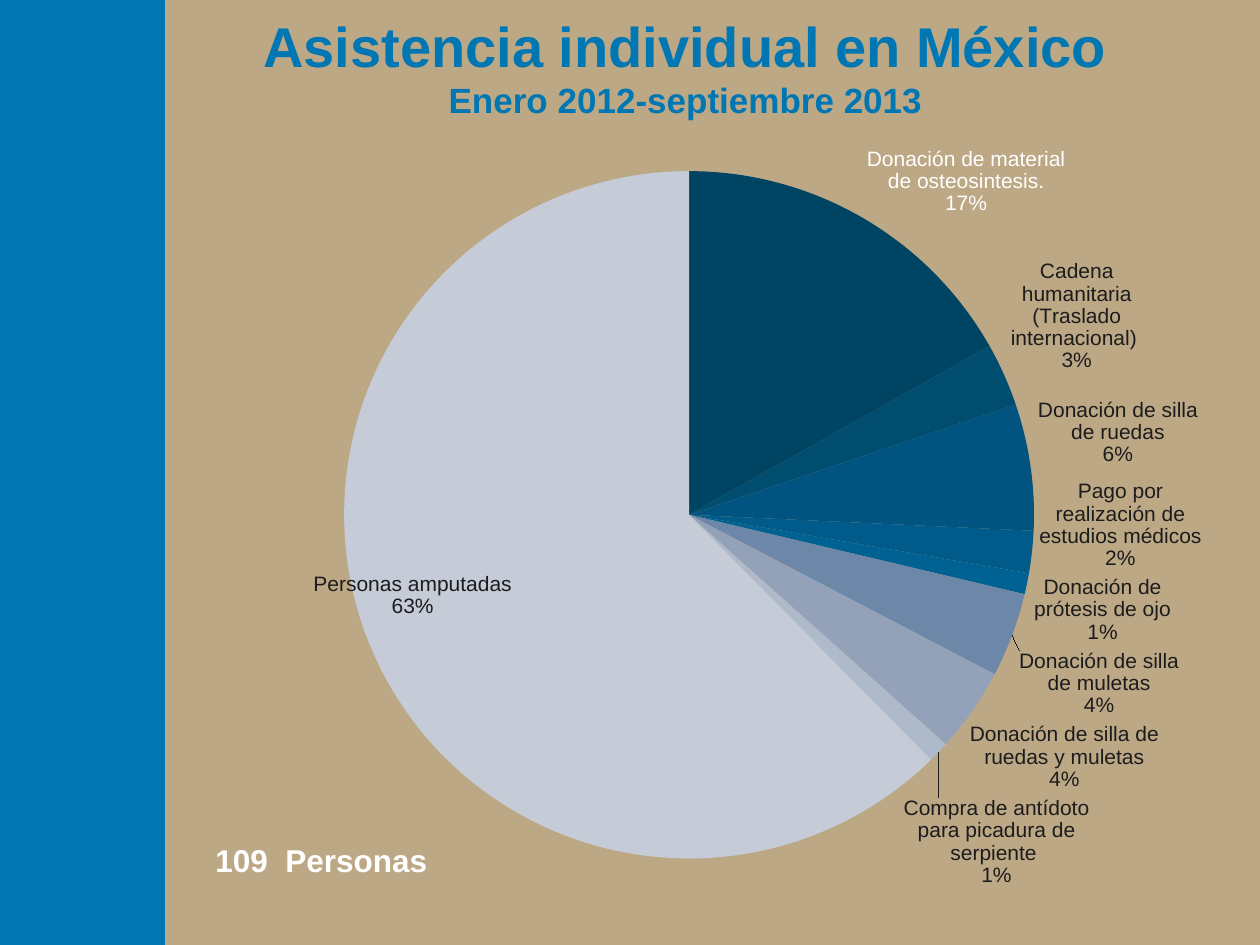
from lxml import etree
from pptx import Presentation
from pptx.chart.data import CategoryChartData
from pptx.dml.color import RGBColor
from pptx.enum.chart import XL_CHART_TYPE, XL_LABEL_POSITION
from pptx.enum.shapes import MSO_SHAPE
from pptx.enum.text import MSO_ANCHOR, MSO_AUTO_SIZE, PP_ALIGN
from pptx.oxml.ns import qn
from pptx.util import Pt

COLORS = {"sand": "BDA886", "blue": "0077B2", "white": "FFFFFF", "ink": "1C1C1C"}

ASSISTANCE = [
    ("Donación de material de osteosintesis.", 17, "004463"),
    ("Cadena humanitaria (Traslado internacional) ", 3, "004D70"),
    ("Donación de silla de ruedas", 6, "00547F"),
    ("Pago por realización de estudios médicos ", 2, "005B8A"),
    ("Donación de prótesis de ojo", 1, "006293"),
    ("Donación de silla de muletas", 4, "6D87A8"),
    ("Donación de silla de ruedas y muletas", 4, "93A2B8"),
    ("Compra de antídoto para picadura de serpiente ", 1, "AEB9CA"),
    ("Amputados", 63, "C6CBD8"),
]


def rgb(name):
    return RGBColor.from_string(COLORS.get(name, name))


def manual_layout(**settings):
    layout = etree.Element(qn("c:layout"))
    manual = etree.SubElement(layout, qn("c:manualLayout"))
    for tag, value in settings.items():
        etree.SubElement(manual, qn(f"c:{tag}")).set("val", str(value))
    return layout


class SlideBuilder:
    """Holds the style and the current slide and adds each kind of element."""

    font_name = "Arial"

    def __init__(self, slide):
        self.slide = slide

    def style(self, font, color, size=None, bold=None):
        font.name = self.font_name
        font.color.rgb = rgb(color)
        if size:
            font.size = Pt(size)
        if bold is not None:
            font.bold = bold

    def background(self, color):
        fill = self.slide.background.fill
        fill.solid()
        fill.fore_color.rgb = rgb(color)

    def band(self, left, top, width, height, color):
        band = self.slide.shapes.add_shape(
            MSO_SHAPE.RECTANGLE, Pt(left), Pt(top), Pt(width), Pt(height))
        band.shadow.inherit = False
        band.fill.solid()
        band.fill.fore_color.rgb = rgb(color)
        band.line.fill.background()

    def title(self, left, top, width, height, lines):
        title = self.slide.shapes.title
        title.left, title.top = Pt(left), Pt(top)
        title.width, title.height = Pt(width), Pt(height)
        frame = title.text_frame
        frame.auto_size = MSO_AUTO_SIZE.NONE
        frame.vertical_anchor = MSO_ANCHOR.MIDDLE
        heading = frame.paragraphs[0]
        heading.alignment = PP_ALIGN.CENTER
        for number, (text, size) in enumerate(lines):
            if number:
                heading.add_line_break()
            run = heading.add_run()
            run.text = text
            run.font.size = Pt(size)
        self.style(heading.font, "blue", bold=True)

    def note(self, left, top, width, height, text, size, color):
        note = self.slide.shapes.add_textbox(Pt(left), Pt(top), Pt(width), Pt(height))
        note.text_frame.word_wrap = True
        note.text_frame.text = text
        self.style(note.text_frame.paragraphs[0].font, color, size, True)

    def pie(self, left, top, width, height, rows, plot_box):
        data = CategoryChartData()
        data.categories = [name for name, _, _ in rows]
        data.add_series("Series 1", [value for _, value, _ in rows])
        chart = self.slide.shapes.add_chart(
            XL_CHART_TYPE.PIE, Pt(left), Pt(top), Pt(width), Pt(height), data).chart
        chart.has_title = False
        chart.has_legend = False
        self.style(chart.font, "white", 18)

        plot_area = chart.plots[0]._element.getparent()
        for old_layout in plot_area.findall(qn("c:layout")):
            plot_area.remove(old_layout)
        x, y, w, h = plot_box
        plot_area.insert(0, manual_layout(
            layoutTarget="inner", xMode="edge", yMode="edge", x=x, y=y, w=w, h=h))

        chart.plots[0].vary_by_categories = True
        series = chart.plots[0].series[0]
        for index, (_, _, color) in enumerate(rows):
            slice_format = series.points[index].format
            slice_format.fill.solid()
            slice_format.fill.fore_color.rgb = rgb(color)
            slice_format.line.fill.background()

        labels = series.data_labels
        labels.show_value = False
        labels.show_category_name = True
        labels.show_percentage = True
        labels.number_format = "0%"
        labels.number_format_is_linked = False
        labels.position = XL_LABEL_POSITION.BEST_FIT
        self.style(labels.font, "ink", 12)
        return series

    def slice_label(self, series, index, text, color, position, offset=None):
        label = series.points[index].data_label
        label.text_frame.text = text
        for paragraph in label.text_frame.paragraphs:
            for run in paragraph.runs:
                self.style(run.font, color, 12)
        label.position = position
        if offset:
            holder = series._element.find(qn("c:dLbls"))
            for element in holder.findall(qn("c:dLbl")):
                if element.find(qn("c:idx")).get("val") == str(index):
                    element.insert(1, manual_layout(x=offset[0], y=offset[1]))


def main():
    deck = Presentation()
    deck.slide_width, deck.slide_height = Pt(720), Pt(540)
    builder = SlideBuilder(deck.slides.add_slide(deck.slide_layouts[5]))
    builder.background("sand")
    builder.band(0, 0, 94.3, 540, "blue")
    builder.title(104.7, 9.6, 574, 56, [
        ("Asistencia individual en México", 32),
        ("Enero 2012-septiembre 2013", 20),
    ])
    assistance = builder.pie(99.4, 82.8, 607, 448, ASSISTANCE, (0.16, 0.03, 0.65, 0.88))
    builder.slice_label(
        assistance, 0, "Donación de material de osteosintesis.\n17%", "white",
        XL_LABEL_POSITION.OUTSIDE_END)
    builder.slice_label(
        assistance, 8, "Personas amputadas\n63%", "ink",
        XL_LABEL_POSITION.CENTER, offset=(-0.11, 0.02))
    builder.note(116, 477, 142, 29, "109  Personas", 18, "white")
    deck.save("out.pptx")


if __name__ == "__main__":
    main()
